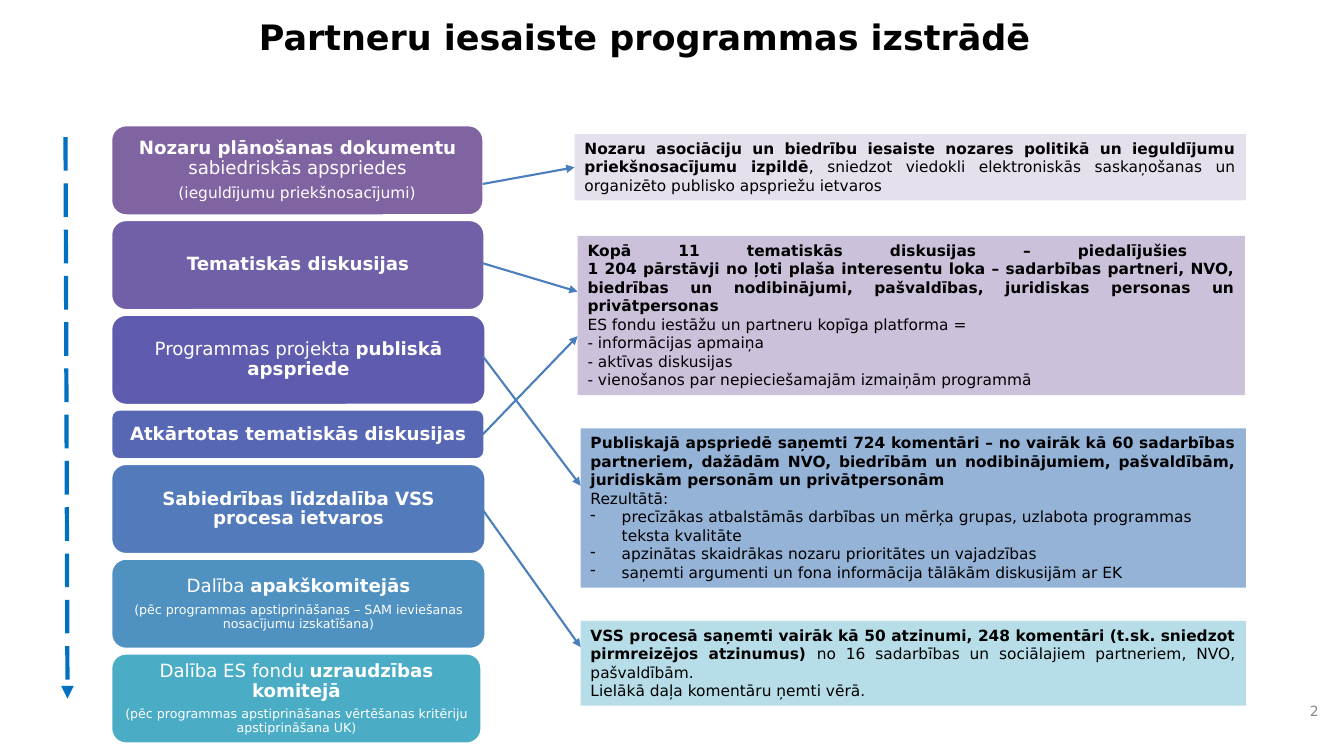
from dataclasses import dataclass

import pptx
import pptx.dml.color
import pptx.enum.dml
import pptx.enum.shapes
import pptx.enum.text
import pptx.oxml
import pptx.oxml.ns
import pptx.util

ALIGN = pptx.enum.text.PP_ALIGN
ANCHOR = pptx.enum.text.MSO_ANCHOR
SHAPE = pptx.enum.shapes.MSO_SHAPE
CELL = pptx.util.Inches(0.1)  # the slide is a grid of square cells
COLUMNS, ROWS = 133.33, 75


@dataclass(frozen=True)
class Theme:
    font: str = "DejaVu Sans"
    dark: str = "000000"
    light: str = "FFFFFF"
    muted: str = "898989"
    timeline: str = "0070C0"
    arrow: str = "4B7EBC"
    title: int = 25
    step: int = 13
    remark: int = 9
    body: int = 11
    number: int = 10


@dataclass(frozen=True)
class Box:
    """Columns and rows of the grid."""
    left: float
    top: float
    width: float
    height: float

    def emu(self):
        return [round(n * CELL) for n in (self.left, self.top, self.width, self.height)]

    def row(self, share):
        return self.top + share * self.height


THEME = Theme()

# width, fill, heading spans (text, bold), remark, remark size
STEPS = [
    (37, "8064A2", [("Nozaru plānošanas dokumentu", True), (" sabiedriskās apspriedes", False)],
     "(ieguldījumu priekšnosacījumi)", THEME.body),
    (37.1, "7160A8", [("Tematiskās diskusijas", True)], None, None),
    (37.2, "5F5BAE", [("Programmas projekta ", False), ("publiskā apspriede", True)], None, None),
    (37.1, "5767B4", [("Atkārtotas tematiskās diskusijas", True)], None, None),
    (37.2, "537ABA", [("Sabiedrības līdzdalība VSS procesa ietvaros", True)], None, None),
    (37.2, "4F91C0", [("Dalība ", False), ("apakškomitejās", True)],
     "(pēc programmas apstiprināšanas – SAM ieviešanas nosacījumu izskatīšana)", THEME.remark),
    (36.8, "4BACC6", [("Dalība ES fondu ", False), ("uzraudzības komitejā", True)],
     "(pēc programmas apstiprināšanas vērtēšanas kritēriju apstiprināšana UK)", THEME.remark),
]
SHORT_STEP = 3

# box, fill, paragraphs (style, spans)
NOTES = [
    (Box(57, 13.3, 66.6, 6.6), "E6E0EC", [
        ("justified", [
            ("Nozaru asociāciju un biedrību iesaiste nozares politikā un ieguldījumu "
             "priekšnosacījumu izpildē", True),
            (", sniedzot viedokli elektroniskās saskaņošanas un organizēto publisko "
             "apspriežu ietvaros", False)])]),
    (Box(57.3, 23.4, 66.2, 15.8), "CCC1DA", [
        ("justified", [
            ("Kopā 11 tematiskās diskusijas – piedalījušies \n1 204 pārstāvji no ļoti plaša "
             "interesentu loka – sadarbības partneri, NVO, biedrības un nodibinājumi, "
             "pašvaldības, juridiskas personas un privātpersonas", True)]),
        ("justified", [("ES fondu iestāžu un partneru kopīga platforma =", False)]),
        ("plain", [("- informācijas apmaiņa", False)]),
        ("plain", [("- aktīvas diskusijas", False)]),
        ("plain", [("- vienošanos par nepieciešamajām izmaiņām programmā", False)])]),
    (Box(57.6, 42.5, 66, 15.8), "95B3D7", [
        ("justified", [
            ("Publiskajā apspriedē saņemti 724 komentāri – no vairāk kā 60 sadarbības "
             "partneriem, dažādām NVO, biedrībām un nodibinājumiem, pašvaldībām, "
             "juridiskām personām un privātpersonām", True)]),
        ("plain", [("Rezultātā:", False)]),
        ("bullet", [("precīzākas atbalstāmās darbības un mērķa grupas, uzlabota programmas "
                     "teksta kvalitāte", False)]),
        ("bullet", [("apzinātas skaidrākas nozaru prioritātes un vajadzības", False)]),
        ("bullet", [("saņemti argumenti un fona informācija tālākām diskusijām ar EK", False)])]),
    (Box(57.6, 61.6, 66, 8.4), "B7DEE8", [
        ("justified", [
            ("VSS procesā saņemti vairāk kā 50 atzinumi, 248 komentāri (t.sk. sniedzot "
             "pirmreizējos atzinumus) ", True),
            ("no 16 sadarbības un sociālajiem partneriem, NVO, pašvaldībām.", False)]),
        ("plain", [("Lielākā daļa komentāru ņemti vērā.", False)])]),
]

# step, share of its height, note, share of its height
LINKS = [(0, 0.65, 0, 0.5), (1, 0.48, 1, 0.35), (2, 0.46, 2, 0.36),
         (3, 0.5, 1, 0.63), (4, 0.51, 3, 0.31)]


def rgb(color):
    return pptx.dml.color.RGBColor.from_string(color)


def add_spans(para, spans, size, color):
    for text, bold in spans:
        for index, part in enumerate(text.split("\n")):
            if index:
                para.add_line_break()
            span = para.add_run()
            span.text = part
            span.font.name = THEME.font
            span.font.size = pptx.util.Pt(size)
            span.font.bold = bold
            span.font.color.rgb = rgb(color)


def next_para(frame, index):
    return frame.add_paragraph() if index else frame.paragraphs[0]


def add_panel(page, kind, box, fill):
    panel = page.shapes.add_shape(kind, *box.emu())
    panel.shadow.inherit = False
    panel.fill.solid()
    panel.fill.fore_color.rgb = rgb(fill)
    panel.text_frame.word_wrap = True
    return panel


def add_label(page, box, text, size, color, bold, align, anchor):
    label = page.shapes.add_textbox(*box.emu())
    frame = label.text_frame
    frame.word_wrap = True
    frame.vertical_anchor = anchor
    frame.paragraphs[0].alignment = align
    add_spans(frame.paragraphs[0], [(text, bold)], size, color)


def add_arrow(page, start, end, color, width, dash=None):
    ends = [round(n * CELL) for n in (*start, *end)]
    arrow = page.shapes.add_connector(pptx.enum.shapes.MSO_CONNECTOR.STRAIGHT, *ends)
    arrow.line.color.rgb = rgb(color)
    arrow.line.width = pptx.util.Pt(width)
    if dash:
        arrow.line.dash_style = dash
    properties = arrow.element.spPr
    outline = properties.find(pptx.oxml.ns.qn("a:ln"))
    space = pptx.oxml.ns.nsdecls("a")
    outline.append(pptx.oxml.parse_xml(f'<a:tailEnd {space} type="triangle"/>'))
    properties.append(pptx.oxml.parse_xml(f"<a:effectLst {space}/>"))


def add_steps(page, left, top, height=9, short=5, gap=0.4):
    """Stack the steps downwards and return their boxes."""
    boxes = []
    for index, (width, fill, heading, remark, remark_size) in enumerate(STEPS):
        box = Box(left, top, width, short if index == SHORT_STEP else height)
        boxes.append(box)
        top += box.height + gap
        step = add_panel(page, SHAPE.ROUNDED_RECTANGLE, box, fill)
        step.line.color.rgb = rgb(THEME.light)
        step.line.width = pptx.util.Pt(2)
        frame = step.text_frame
        frame.vertical_anchor = ANCHOR.MIDDLE
        frame.margin_left = frame.margin_right = pptx.util.Inches(0.05)
        frame.margin_top = frame.margin_bottom = pptx.util.Inches(0.03)
        lines = [(heading, THEME.step)]
        if remark:
            lines.append(([(remark, False)], remark_size))
        for number, (spans, size) in enumerate(lines):
            para = next_para(frame, number)
            para.alignment = ALIGN.CENTER
            para.line_spacing = 0.9
            para.space_after = pptx.util.Pt(round(0.35 * size))
            add_spans(para, spans, size, THEME.light)
    return boxes


def add_note(page, box, fill, paras):
    note = add_panel(page, SHAPE.RECTANGLE, box, fill)
    note.line.fill.background()
    frame = note.text_frame
    frame.vertical_anchor = ANCHOR.TOP
    frame.auto_size = pptx.enum.text.MSO_AUTO_SIZE.SHAPE_TO_FIT_TEXT
    for index, (style, spans) in enumerate(paras):
        para = next_para(frame, index)
        para.alignment = ALIGN.JUSTIFY if style == "justified" else ALIGN.LEFT
        if style == "bullet":
            properties = para._p.get_or_add_pPr()
            indent = pptx.util.Inches(0.31)
            properties.set("marL", str(indent))
            properties.set("indent", str(-indent))
            space = pptx.oxml.ns.nsdecls("a")
            properties.append(pptx.oxml.parse_xml(f'<a:buChar {space} char="-"/>'))
        add_spans(para, spans, THEME.body, THEME.dark)


def add_partner_page(deck):
    page = deck.slides.add_slide(deck.slide_layouts[6])
    add_label(page, Box(24.7, 1.1, 79.6, 11.3), "Partneru iesaiste programmas izstrādē",
              THEME.title, THEME.dark, True, ALIGN.LEFT, ANCHOR.TOP)
    add_label(page, Box(125, 68.6, 6.8, 3.9), "2",
              THEME.number, THEME.muted, False, ALIGN.RIGHT, ANCHOR.MIDDLE)
    add_arrow(page, (6.5, 13.6), (6.7, 69.3), THEME.timeline, 3,
              pptx.enum.dml.MSO_LINE.LONG_DASH)
    steps = add_steps(page, 11, 12.4)
    for note in NOTES:
        add_note(page, *note)
    for step, step_share, note, note_share in LINKS:
        target = NOTES[note][0]
        add_arrow(page, (47.9, steps[step].row(step_share)),
                  (target.left, target.row(note_share)), THEME.arrow, 1.5)


def main():
    deck = pptx.Presentation()
    deck.slide_width, deck.slide_height = round(COLUMNS * CELL), ROWS * CELL
    add_partner_page(deck)
    deck.save("out.pptx")


if __name__ == "__main__":
    main()
